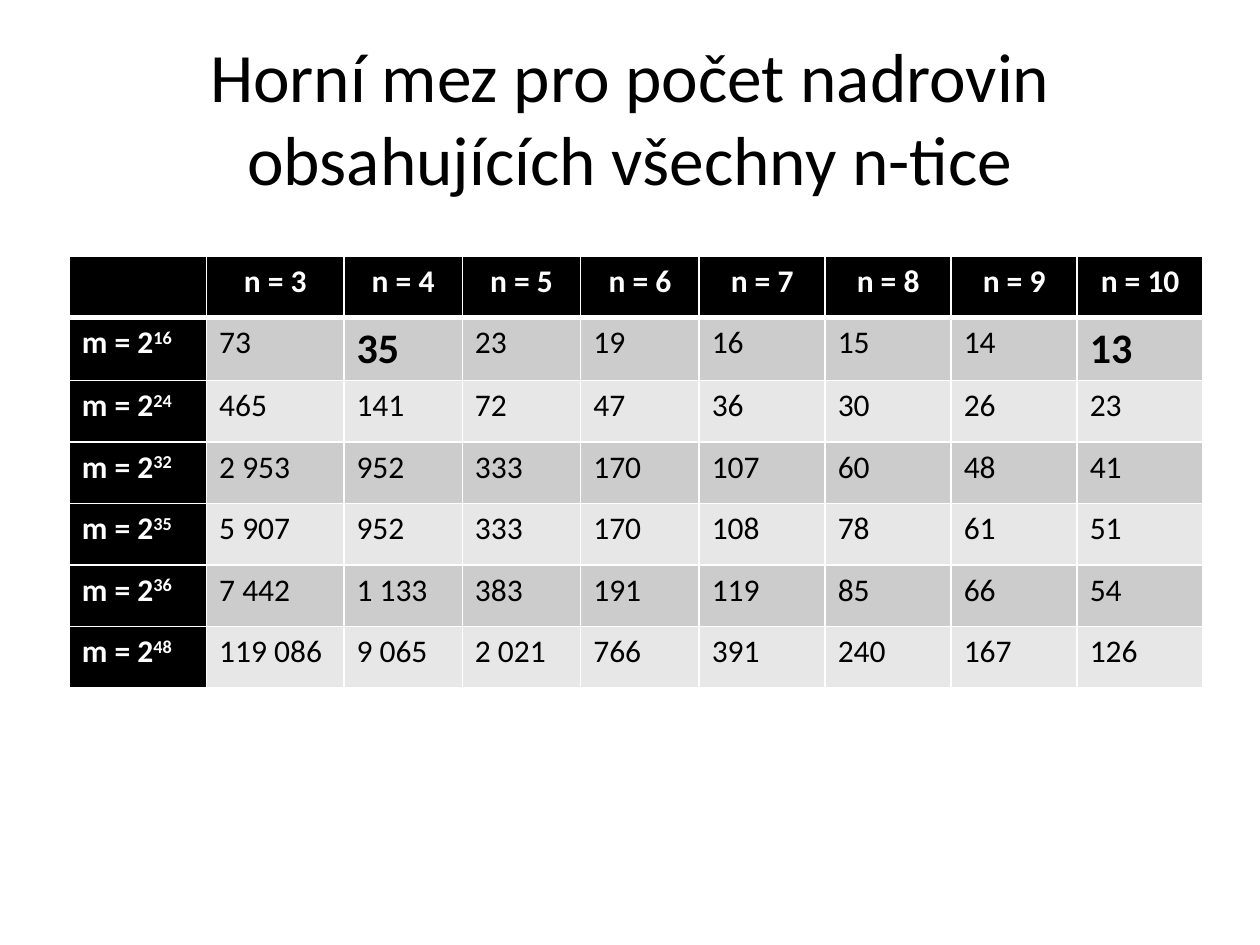
from lxml.etree import SubElement
from pptx import Presentation
from pptx.dml.color import RGBColor
from pptx.enum.text import MSO_ANCHOR, PP_ALIGN
from pptx.oxml.ns import qn
from pptx.util import Inches, Pt

BLACK, WHITE = "000000", "FFFFFF"
BANDS = ["CCCCCC", "E7E7E7"]
EXPONENTS = [16, 24, 32, 35, 36, 48]
DIMENSIONS = range(3, 11)
BOUNDS = [
    ["73", "35", "23", "19", "16", "15", "14", "13"],
    ["465", "141", "72", "47", "36", "30", "26", "23"],
    ["2 953", "952", "333", "170", "107", "60", "48", "41"],
    ["5 907", "952", "333", "170", "108", "78", "61", "51"],
    ["7 442", "1 133", "383", "191", "119", "85", "66", "54"],
    ["119 086", "9 065", "2 021", "766", "391", "240", "167", "126"],
]
HIGHLIGHTED = [(1, 2), (1, 8)]
COLUMN_WIDTHS = [1.09] * 2 + [0.94] * 3 + [1] * 4
ROW_HEIGHT = 3.42 / 7


def add_span(para, text, size, color, bold=False):
    span = para.add_run()
    span.text = text
    span.font.name = "Calibri"
    span.font.size = Pt(size)
    span.font.bold = bold
    span.font.color.rgb = RGBColor.from_string(color)
    return span


def style_cell(cell, fill, top, bottom):
    """Give the cell a solid fill and white borders, with top and bottom widths in points."""
    properties = cell._tc.get_or_add_tcPr()
    for side, width in (("L", 1), ("R", 1), ("T", top), ("B", bottom)):
        line = SubElement(properties, qn(f"a:ln{side}"), w=str(Pt(width)))
        solid = SubElement(line, qn("a:solidFill"))
        SubElement(solid, qn("a:srgbClr"), val=WHITE)
    cell.fill.solid()
    cell.fill.fore_color.rgb = RGBColor.from_string(fill)


deck = Presentation()
deck.slide_width, deck.slide_height = Inches(10), Inches(7.5)
page = deck.slides.add_slide(deck.slide_layouts[6])

title = page.shapes.add_textbox(Inches(0.5), Inches(0.3), Inches(9), Inches(1.25)).text_frame
title.word_wrap = True
title.vertical_anchor = MSO_ANCHOR.MIDDLE
para = title.paragraphs[0]
para.alignment = PP_ALIGN.CENTER
add_span(para, "Horní mez pro počet nadrovin obsahujících všechny n-tice", 39.6, BLACK)

table = page.shapes.add_table(
    len(BOUNDS) + 1, len(COLUMN_WIDTHS),
    Inches(0.55), Inches(2.03), Inches(9), Inches(ROW_HEIGHT * 7),
).table
for column, width in zip(table.columns, COLUMN_WIDTHS):
    column.width = Inches(width)

for r, row in enumerate(table.rows):
    row.height = Inches(ROW_HEIGHT)
    for c, cell in enumerate(row.cells):
        is_label = r == 0 or c == 0
        fill = BLACK if is_label else BANDS[(r - 1) % 2]
        style_cell(cell, fill, top=3 if r == 1 else 1, bottom=3 if r == 0 else 1)
        para = cell.text_frame.paragraphs[0]
        if r == 0 and c > 0:
            para.alignment = PP_ALIGN.CENTER
            add_span(para, f"n = {DIMENSIONS[c - 1]}", 18, WHITE, bold=True)
        elif r > 0 and c == 0:
            add_span(para, "m = 2", 18, WHITE, bold=True)
            exponent = add_span(para, str(EXPONENTS[r - 1]), 18, WHITE, bold=True)
            exponent._r.get_or_add_rPr().set("baseline", "30000")
        elif r > 0:
            strong = (r, c) in HIGHLIGHTED
            add_span(para, BOUNDS[r - 1][c - 1], 24 if strong else 18, BLACK, bold=strong)

deck.save("out.pptx")
